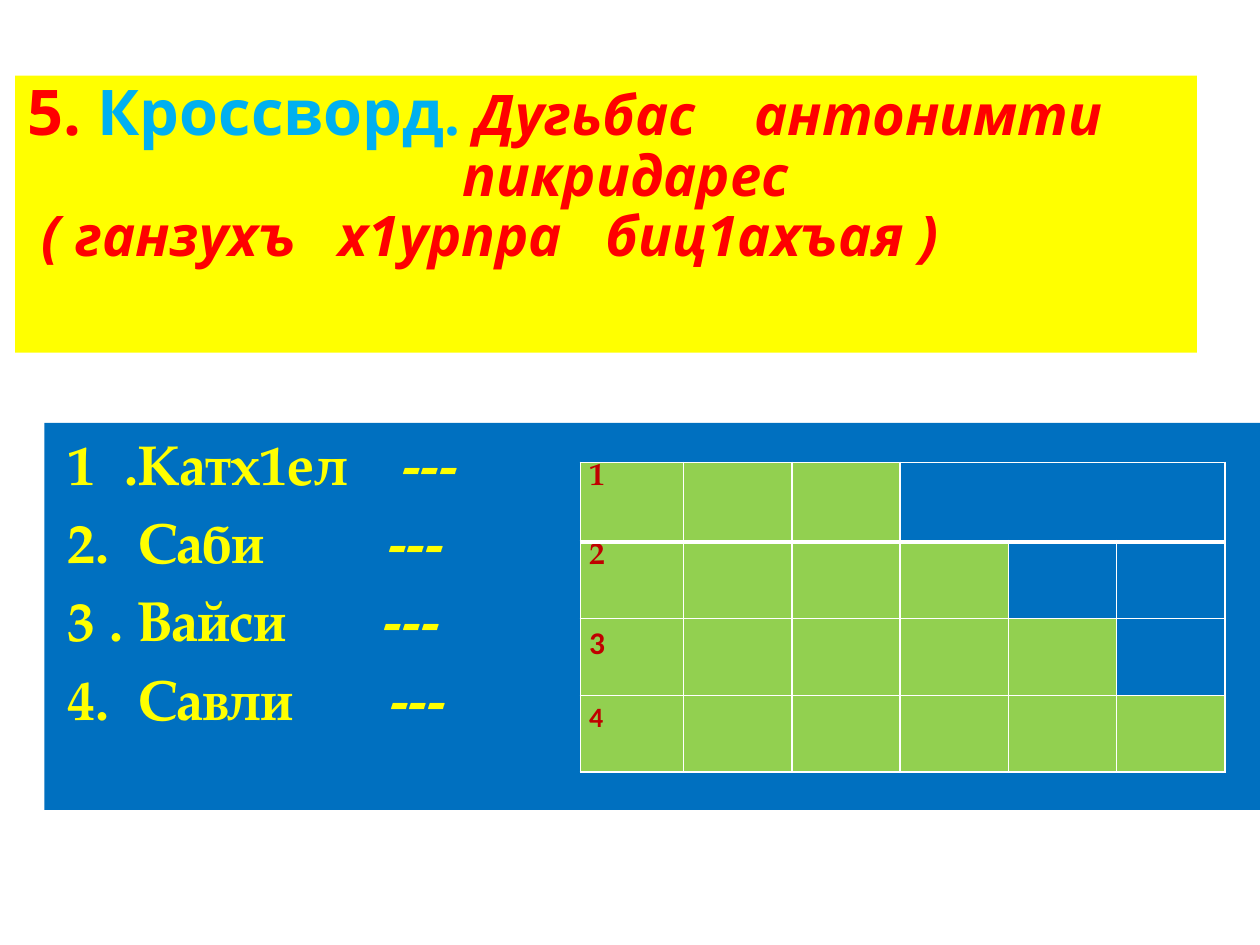
from lxml.etree import SubElement
from pptx import Presentation
from pptx.dml.color import RGBColor
from pptx.enum.shapes import MSO_SHAPE
from pptx.enum.text import MSO_ANCHOR, PP_ALIGN
from pptx.oxml.ns import qn
from pptx.util import Pt

WHITE = RGBColor(0xFF, 0xFF, 0xFF)
YELLOW = RGBColor(0xFF, 0xFF, 0x00)
RED = RGBColor(0xFF, 0x00, 0x00)
DARK_RED = RGBColor(0xC0, 0x00, 0x00)
SKY = RGBColor(0x00, 0xB0, 0xF0)
BLUE = RGBColor(0x00, 0x70, 0xC0)
GREEN = RGBColor(0x92, 0xD0, 0x50)
SANS = "Open Sans"
SERIF = "TeX Gyre Pagella"


def add_text(paragraph, text, font=SANS, size=32, color=RED, italic=False):
    run = paragraph.add_run()
    run.text = text
    run.font.name = font
    run.font.size = Pt(size)
    run.font.bold = True
    run.font.italic = italic
    run.font.color.rgb = color


def set_tabs(paragraph, positions):
    tab_list = SubElement(paragraph._p.get_or_add_pPr(), qn("a:tabLst"))
    for position in positions:
        SubElement(tab_list, qn("a:tab"), pos=str(Pt(position)), algn="l")


def set_borders(cell, widths):
    properties = cell._tc.get_or_add_tcPr()
    for side, width in zip("LRTB", widths):
        line = SubElement(properties, qn(f"a:ln{side}"), w=str(Pt(width)))
        fill = SubElement(line, qn("a:solidFill"))
        SubElement(fill, qn("a:srgbClr"), val=str(WHITE))


class CrosswordSlide:
    def __init__(self, presentation):
        self.slide = presentation.slides.add_slide(presentation.slide_layouts[6])

    def panel(self, left, top, width, height, fill, left_inset, top_inset):
        shape = self.slide.shapes.add_shape(
            MSO_SHAPE.RECTANGLE, Pt(left), Pt(top), Pt(width), Pt(height))
        shape.shadow.inherit = False
        shape.fill.solid()
        shape.fill.fore_color.rgb = fill
        shape.line.fill.background()
        frame = shape.text_frame
        frame.word_wrap = True
        frame.vertical_anchor = MSO_ANCHOR.TOP
        frame.margin_left = Pt(left_inset)
        frame.margin_top = Pt(top_inset)
        return frame

    def paragraphs(self, frame, count, line_spacing=1.0, space_before=0):
        for index in range(count):
            paragraph = frame.add_paragraph() if index else frame.paragraphs[0]
            paragraph.alignment = PP_ALIGN.LEFT
            paragraph.line_spacing = line_spacing
            paragraph.space_before = Pt(space_before)
        return frame.paragraphs

    def title(self):
        frame = self.panel(8.6, 43.2, 675.4, 158.4, YELLOW, 7.2, 3.5)
        first, second, third = self.paragraphs(frame, 3, line_spacing=0.89)
        add_text(first, "5. ", size=36)
        add_text(first, "Кроссворд", size=36, color=SKY)
        add_text(first, ". ", color=SKY)
        add_text(first, "Дугьбас\tантонимти", italic=True)
        set_tabs(first, [415.6])
        second._p.get_or_add_pPr().set("marL", str(Pt(248.8)))
        add_text(second, "пикридарес", italic=True)
        add_text(third, " ( ганзухъ\tх1урпра\tбиц1ахъая )", italic=True)
        set_tabs(third, [178, 330.5])

    def clues(self, clues):
        frame = self.panel(25.4, 241.6, 694.6, 221.2, BLUE, 13, 3.6)
        paragraphs = self.paragraphs(frame, len(clues), space_before=6.4)
        for paragraph, (clue, tabs) in zip(paragraphs, clues):
            add_text(paragraph, clue, font=SERIF, color=YELLOW)
            set_tabs(paragraph, tabs)

    def grid(self, answer_lengths, number_styles):
        columns = max(answer_lengths)
        table = self.slide.shapes.add_table(
            len(answer_lengths), columns, Pt(331.7), Pt(264.2), Pt(368.4), Pt(177)).table
        table.first_row = table.horz_banding = False
        for index, column in enumerate(table.columns):
            column.width = Pt(61.9 if index else 58.9)
        for index, length in enumerate(answer_lengths):
            table.rows[index].height = Pt(43.8 if index else 45.6)
            for position in range(columns):
                cell = table.cell(index, position)
                top, bottom = (1, 3) if index == 0 else (3 if index == 1 else 1, 1)
                set_borders(cell, (1, 1, top, bottom))
                cell.fill.solid()
                cell.fill.fore_color.rgb = GREEN if position < length else BLUE
            cell = table.cell(index, 0)
            cell.margin_left = cell.margin_right = Pt(5)
            cell.margin_top = cell.margin_bottom = Pt(0)
            font, size, spacing = number_styles[index]
            paragraph = cell.text_frame.paragraphs[0]
            paragraph.line_spacing = spacing
            add_text(paragraph, str(index + 1), font=font, size=size, color=DARK_RED)
        table.cell(0, answer_lengths[0]).merge(table.cell(0, columns - 1))


def main():
    presentation = Presentation()
    presentation.slide_width = Pt(720)
    presentation.slide_height = Pt(540)
    slide = CrosswordSlide(presentation)
    slide.title()
    slide.clues([
        ("1\t.Катх1ел\t---", [32.5, 191.5]),
        ("2.\tСаби\t---", [40.5, 183.5]),
        ("3 . Вайси\t---", [181]),
        ("4.\tСавли\t---", [40.5, 184.5]),
    ])
    slide.grid([3, 4, 5, 6], [
        (SERIF, 18, 1.0), (SERIF, 18, 1.0), ("Calibri", 18, 1.15), ("Calibri", 16, 1.15),
    ])
    presentation.save("out.pptx")


if __name__ == "__main__":
    main()
